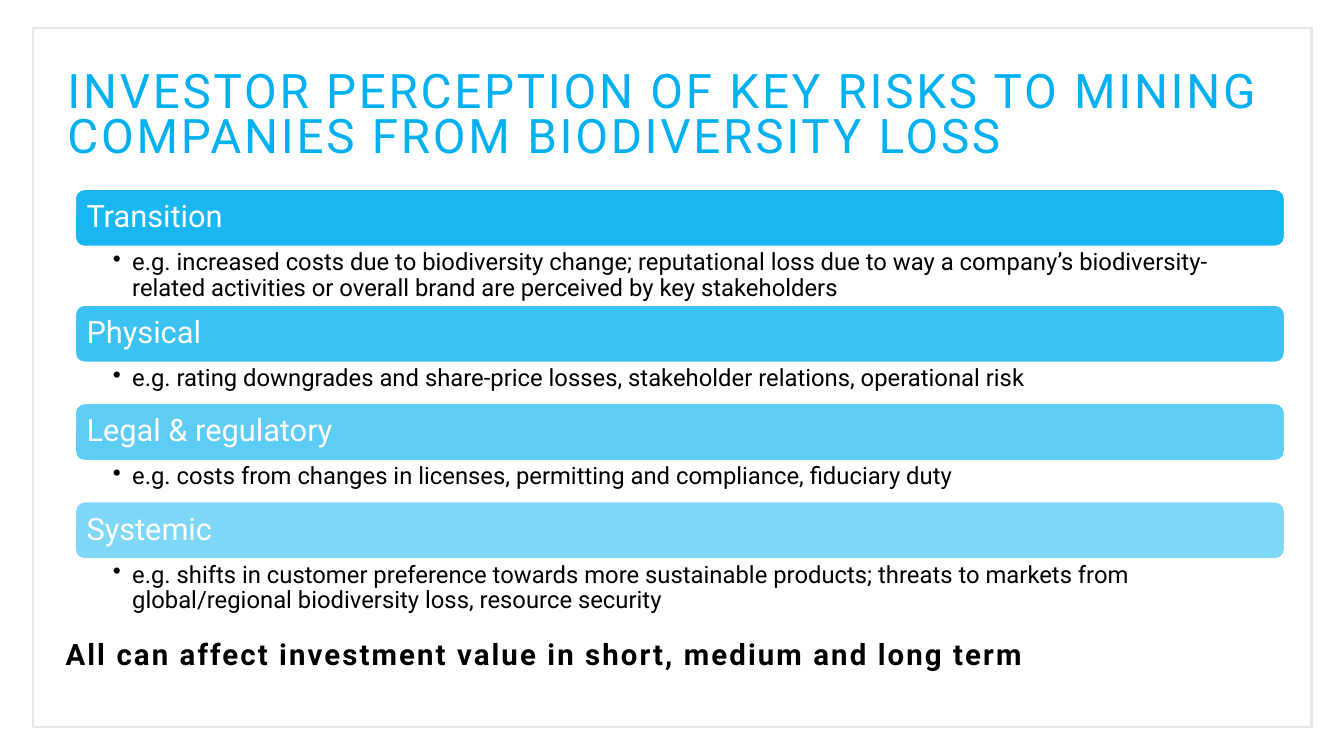
from lxml.etree import SubElement
from pptx import Presentation
from pptx.dml.color import RGBColor
from pptx.enum.shapes import MSO_SHAPE
from pptx.enum.text import MSO_ANCHOR, MSO_AUTO_SIZE, PP_ALIGN
from pptx.oxml.ns import qn
from pptx.util import Pt

SKY = RGBColor(0x00, 0xB0, 0xF0)
WHITE = RGBColor(0xFF, 0xFF, 0xFF)
BLACK = RGBColor(0x00, 0x00, 0x00)
FRAME_GREY = RGBColor(0xEA, 0xE6, 0xE3)

LEFT, WIDTH = 53.3, 864.7
BAR_HEIGHT = 41.8

RISKS = [
    ("Transition", 90, 41, "e.g. increased costs due to biodiversity change; reputational loss due to way a company’s biodiversity-related activities or overall brand are perceived by key stakeholders"),
    ("Physical", 77, 28.4, "e.g. rating downgrades and share-price losses, stakeholder relations, operational risk"),
    ("Legal & regulatory", 63, 28.4, "e.g. costs from changes in licenses, permitting and compliance, fiduciary duty"),
    ("Systemic", 50, 41, "e.g. shifts in customer preference towards more sustainable products; threats to markets from global/regional biodiversity loss, resource security"),
]


def place(shape, left, top, width, height):
    shape.left, shape.top = Pt(left), Pt(top)
    shape.width, shape.height = Pt(width), Pt(height)


def write(shape, text, size, color, line_spacing, insets, anchor, bullet=None, indent=0, tracking=0):
    frame = shape.text_frame
    frame.word_wrap = True
    frame.auto_size = MSO_AUTO_SIZE.NONE
    frame.vertical_anchor = anchor
    frame.margin_left, frame.margin_top, frame.margin_right, frame.margin_bottom = map(Pt, insets)
    para = frame.paragraphs[0]
    para.text = text
    para.alignment = PP_ALIGN.LEFT
    para.line_spacing = line_spacing
    para.space_before = Pt(0)
    properties = para._p.get_or_add_pPr()
    properties.set("marL", str(Pt(indent)))
    properties.set("indent", str(-Pt(indent)))
    if bullet:
        SubElement(properties, qn("a:buChar"), char=bullet)
    else:
        SubElement(properties, qn("a:buNone"))
    para.font.name = "Roboto"
    para.font.size = Pt(size)
    para.font.color.rgb = color
    properties.find(qn("a:defRPr")).set("spc", str(int(tracking * 100)))
    return para


deck = Presentation()
deck.slide_width, deck.slide_height = Pt(960), Pt(540)
page = deck.slides.add_slide(deck.slide_layouts[1])

border = page.shapes.add_shape(MSO_SHAPE.RECTANGLE, Pt(23.8), Pt(20.2), Pt(913), Pt(499))
border.shadow.inherit = False
border.fill.background()
border.line.color.rgb = FRAME_GREY
border.line.width = Pt(1.5)

title = page.shapes.title
place(title, 41, 47.5, 878.4, 79.2)
write(title, "INVESTOR PERCEPTION OF KEY RISKS TO MINING COMPANIES FROM BIODIVERSITY LOSS",
      34, SKY, 0.8, (7.2, 3.6, 7.2, 3.6), MSO_ANCHOR.TOP, tracking=2)

closing = page.placeholders[1]
place(closing, 39.6, 440.6, 878.4, 44.6)
closing_para = write(closing, "All can affect investment value in short, medium and long term",
                     21, BLACK, 1.4, (7.2, 3.6, 7.2, 3.6), MSO_ANCHOR.TOP, tracking=1.5)
closing_para.font.bold = True

top = 134.7
for name, opacity, detail_height, example in RISKS:
    bar = page.shapes.add_shape(MSO_SHAPE.ROUNDED_RECTANGLE, Pt(LEFT), Pt(top), Pt(WIDTH), Pt(BAR_HEIGHT))
    bar.shadow.inherit = False
    bar.fill.solid()
    bar.fill.fore_color.rgb = SKY
    fill_color = bar.fill._xPr.find(qn("a:solidFill"))[0]
    SubElement(fill_color, qn("a:alpha"), val=str(opacity * 1000))
    bar.line.color.rgb = WHITE
    bar.line.width = Pt(2)
    write(bar, name, 22, WHITE, 0.9, (6.5, 6.5, 6.5, 6.5), MSO_ANCHOR.MIDDLE)

    detail = page.shapes.add_textbox(Pt(LEFT), Pt(top + BAR_HEIGHT), Pt(WIDTH), Pt(detail_height))
    write(detail, example, 17, BLACK, 0.9, (27.4, 2.2, 12.2, 2.2), MSO_ANCHOR.TOP, bullet="•", indent=13.7)
    top += BAR_HEIGHT + detail_height

deck.save("out.pptx")
